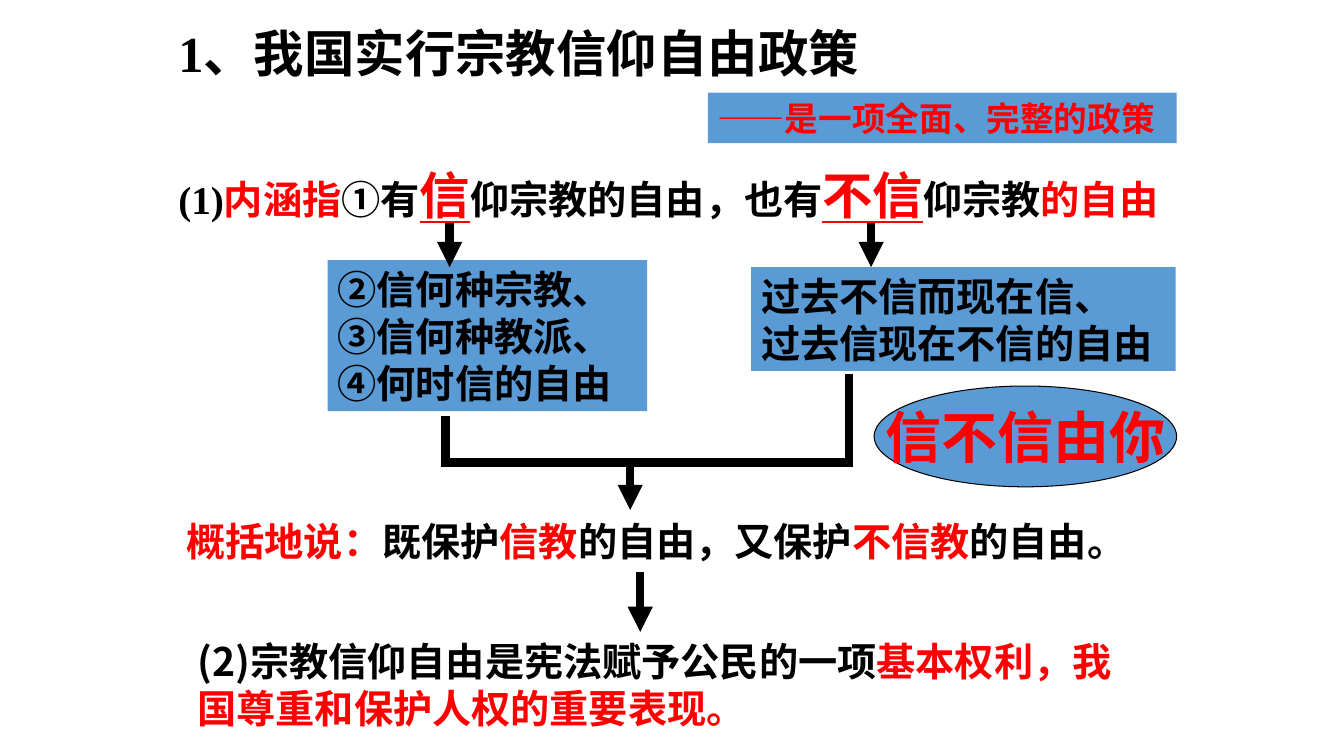
import pptx
import pptx.dml.color
import pptx.enum.shapes
import pptx.enum.text
import pptx.oxml
import pptx.oxml.ns
import pptx.util

PX = 9144  # one hundredth of an inch, in EMU
BLACK = pptx.dml.color.RGBColor(0x00, 0x00, 0x00)
RED = pptx.dml.color.RGBColor(0xFF, 0x00, 0x00)
BLUE = pptx.dml.color.RGBColor(0x5B, 0x9B, 0xD5)
SERIF = "Times New Roman"
SANS = "Noto Sans CJK SC"
RECTANGLE = pptx.enum.shapes.MSO_SHAPE.RECTANGLE
OVAL = pptx.enum.shapes.MSO_SHAPE.OVAL


def px(*lengths):
    return [pptx.util.Emu(length * PX) for length in lengths]


def write(shape, paragraphs, font=SERIF, size=28):
    """Each run is (text, colour) or, for an underlined word, (text, colour, size)."""
    frame = shape.text_frame
    frame.word_wrap = True
    frame.vertical_anchor = pptx.enum.text.MSO_ANCHOR.TOP
    for index, runs in enumerate(paragraphs):
        paragraph = frame.add_paragraph() if index else frame.paragraphs[0]
        paragraph.alignment = pptx.enum.text.PP_ALIGN.LEFT
        for text, colour, *emphasis in runs:
            run = paragraph.add_run()
            run.text = text
            run.font.name = font
            run.font.bold = True
            run.font.size = pptx.util.Pt(emphasis[0] if emphasis else size)
            run.font.underline = bool(emphasis)
            run.font.color.rgb = colour
            # Chinese characters are always sans serif
            east_asian = pptx.oxml.parse_xml(
                f'<a:ea {pptx.oxml.ns.nsdecls("a")} typeface="{SANS}"/>')
            run.font._element.find(pptx.oxml.ns.qn("a:latin")).addnext(east_asian)
    return frame


def add_text(slide, box, runs, **style):
    return write(slide.shapes.add_textbox(*px(*box)), [runs], **style)


def add_panel(slide, box, paragraphs, kind=RECTANGLE, **style):
    shape = slide.shapes.add_shape(kind, *px(*box))
    shape.shadow.inherit = False
    shape.fill.solid()
    shape.fill.fore_color.rgb = BLUE
    shape.line.fill.background()
    write(shape, paragraphs, **style)
    return shape


def add_line(slide, start, end, arrow=False):
    connector = slide.shapes.add_connector(
        pptx.enum.shapes.MSO_CONNECTOR.STRAIGHT, *px(*start, *end))
    connector.line.color.rgb = BLACK
    connector.line.width = pptx.util.Pt(6)
    namespace = pptx.oxml.ns.nsdecls("a")
    outline = connector.line._get_or_add_ln()
    outline.set("cap", "sq")  # square ends close the corners
    if arrow:
        outline.append(pptx.oxml.parse_xml(f'<a:tailEnd {namespace} type="triangle"/>'))
    connector._element.spPr.append(pptx.oxml.parse_xml(f"<a:effectLst {namespace}/>"))


def add_heading(slide, left, top):
    add_text(slide, (left, top, 808, 70), [("1、我国实行宗教信仰自由政策", BLACK)], size=36)
    add_panel(slide, (left + 535, top + 75, 465, 50),
              [[("——是一项全面、完整的政策", RED)]], size=24)


def add_meaning(slide, left, top):
    add_text(slide, (left, top, 1000, 70), [
        ("(1)", BLACK), ("内涵指", RED), ("①有", BLACK), ("信", RED, 36),
        ("仰宗教的自由，也有", BLACK), ("不信", RED, 36),
        ("仰宗教", BLACK), ("的自由", RED)])
    add_panel(slide, (left + 158, top + 100, 317, 150), [
        [("②信何种宗教、", BLACK)], [("③信何种教派、", BLACK)], [("④何时信的自由", BLACK)]])
    add_panel(slide, (left + 578, top + 107, 421, 103), [
        [("过去不信而现在信、", BLACK)], [("过去信现在不信的自由", BLACK)]])
    for x in (left + 279, left + 697):
        add_line(slide, (x, top + 67), (x, top + 107), arrow=True)


def add_bracket(slide, left, right, bottom):
    """Join the two panels and point down to the summary."""
    add_line(slide, (left, bottom - 42), (left, bottom))
    add_line(slide, (right, bottom - 84), (right, bottom))
    add_line(slide, (right, bottom), (left, bottom))
    add_line(slide, (625, bottom + 8), (625, bottom + 47), arrow=True)


def add_slogan(slide, box):
    oval = add_panel(slide, box, [[("信不信由你", RED)]], kind=OVAL, size=40)
    oval.line.color.rgb = BLACK
    oval.line.width = pptx.util.Pt(0.75)
    oval.text_frame.word_wrap = False
    oval.text_frame.vertical_anchor = pptx.enum.text.MSO_ANCHOR.MIDDLE
    oval.text_frame.paragraphs[0].alignment = pptx.enum.text.PP_ALIGN.CENTER


def add_summary(slide, left, top):
    frame = add_text(slide, (left, top, 1000, 57), [
        ("概括地说：", RED), ("既保护", BLACK), ("信教", RED),
        ("的自由，又保护", BLACK), ("不信教", RED), ("的自由。", BLACK)], font=SANS)
    frame.margin_left = px(18)[0]
    add_line(slide, (left + 468, top + 64), (left + 468, top + 119), arrow=True)
    add_text(slide, (left + 19, top + 119, 961, 103), [
        ("(2)宗教信仰自由是宪法赋予公民的一项", BLACK),
        ("基本权利，我国尊重和保护人权的重要表现。", RED)], font=SANS)


def main():
    presentation = pptx.Presentation()
    presentation.slide_width, presentation.slide_height = px(1333, 750)
    slide = presentation.slides.add_slide(presentation.slide_layouts[6])
    add_heading(slide, 167, 17)
    add_meaning(slide, 167, 158)
    add_summary(slide, 167, 508)
    add_bracket(slide, 442, 842, 459)
    add_slogan(slide, (867, 383, 300, 100))
    presentation.save("out.pptx")


if __name__ == "__main__":
    main()
